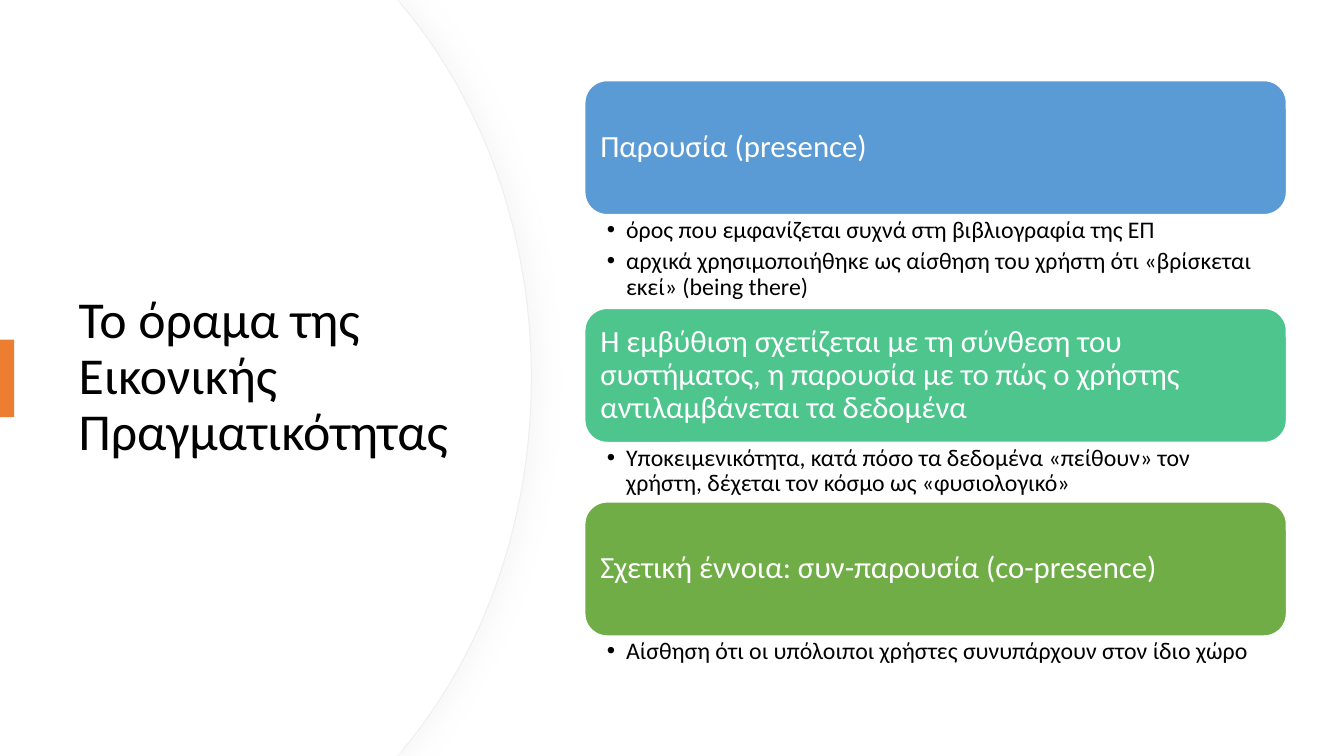
from lxml.etree import SubElement
from pptx import Presentation
from pptx.dml.color import RGBColor
from pptx.enum.shapes import MSO_SHAPE
from pptx.enum.text import MSO_ANCHOR, MSO_AUTO_SIZE, PP_ALIGN
from pptx.oxml.ns import qn
from pptx.util import Inches, Pt

WIDTH, HEIGHT = 13.33, 7.5
FONT = "Calibri"
COLOURS = {
    "white": "FFFFFF", "black": "000000", "edge": "EFEFEF", "shadow": "D9D9D9",
    "accent": "ED7D31", "blue": "5B9BD5", "teal": "4DC58D", "green": "70AD47",
}
CARD_HEIGHT = 1.33
TOPICS = [
    ("blue", "Παρουσία (presence)", 0.93,
     ["όρος που εμφανίζεται συχνά στη βιβλιογραφία της ΕΠ",
      "αρχικά χρησιμοποιήθηκε ως αίσθηση του χρήστη ότι «βρίσκεται εκεί» (being there)"]),
    ("teal", "Η εμβύθιση σχετίζεται με τη σύνθεση του συστήματος, η παρουσία με το πώς "
     "ο χρήστης αντιλαμβάνεται τα δεδομένα", 0.59,
     ["Υποκειμενικότητα, κατά πόσο τα δεδομένα «πείθουν» τον χρήστη, "
      "δέχεται τον κόσμο ως «φυσιολογικό»"]),
    ("green", "Σχετική έννοια: συν-παρουσία (co-presence)", 0.4,
     ["Αίσθηση ότι οι υπόλοιποι χρήστες συνυπάρχουν στον ίδιο χώρο"]),
]


def colour(name):
    """Return the named colour."""
    return RGBColor.from_string(COLOURS[name])


def paint(shape, fill, line=None, width=1):
    """Set a shape's fill and outline and remove its shadow."""
    shape.shadow.inherit = False
    shape.fill.solid()
    shape.fill.fore_color.rgb = colour(fill)
    if line:
        shape.line.color.rgb = colour(line)
        shape.line.width = Pt(width)
    else:
        shape.line.fill.background()


def write(frame, texts, size, ink, anchor=MSO_ANCHOR.TOP, insets=(0.1, 0.05, 0.1, 0.05),
          space_after=0, bullet=None):
    """Fill a text frame with one paragraph per text."""
    frame.word_wrap = True
    frame.auto_size = MSO_AUTO_SIZE.NONE
    frame.vertical_anchor = anchor
    (frame.margin_left, frame.margin_top,
     frame.margin_right, frame.margin_bottom) = map(Inches, insets)
    for index, text in enumerate(texts):
        paragraph = frame.add_paragraph() if index else frame.paragraphs[0]
        paragraph.alignment = PP_ALIGN.LEFT
        paragraph.line_spacing = 0.9
        paragraph.space_before = Pt(0)
        paragraph.space_after = Pt(space_after)
        run = paragraph.add_run()
        run.text = text
        run.font.name = FONT
        run.font.size = Pt(size)
        run.font.color.rgb = colour(ink)
        if bullet:
            properties = paragraph._p.get_or_add_pPr()
            properties.set("marL", str(Inches(0.19)))
            properties.set("indent", str(-Inches(0.19)))
            SubElement(properties, qn("a:buFont"), typeface="Arial")
            SubElement(properties, qn("a:buChar"), char=bullet)


def add_shadow(shape):
    """Give a shape a soft grey shadow to its right."""
    effects = shape._element.spPr.find(qn("a:effectLst"))
    shadow = SubElement(effects, qn("a:outerShdw"), blurRad=str(Pt(20)), dist=str(Pt(3)),
                        dir="0", algn="l", rotWithShape="0")
    shade = SubElement(shadow, qn("a:srgbClr"), val=COLOURS["shadow"])
    SubElement(shade, qn("a:alpha"), val="25000")


def bend(segment, controls):
    """Turn a straight outline segment into a cubic curve with the given controls."""
    segment.tag = qn("a:cubicBezTo")
    for index, (x, y) in enumerate(controls):
        point = segment.makeelement(qn("a:pt"), x=str(Inches(x)), y=str(Inches(y)))
        segment.insert(index, point)


def add_panel(slide, right):
    """Draw a full-height panel whose right side bulges to the given place."""
    shoulder, middle = right - 1.26, HEIGHT / 2
    outline = [(3.94, 0), (shoulder, 0.08), (right, middle), (shoulder, HEIGHT - 0.08),
               (3.94, HEIGHT), (0, HEIGHT)]
    builder = slide.shapes.build_freeform(0, 0)
    builder.add_line_segments([(Inches(x), Inches(y)) for x, y in outline], close=True)
    panel = builder.convert_to_shape()
    segments = list(panel._element.iter(qn("a:lnTo")))
    upper = [(right - 0.48, 1.02), (right, 2.32)]
    bend(segments[2], upper)
    bend(segments[3], [(x, HEIGHT - y) for x, y in reversed(upper)])
    return panel


def add_title_region(slide, left, top, width, height):
    """Draw the curved panels, the title and the accent tab."""
    outer = add_panel(slide, 5.27)
    paint(outer, "white", "edge", 0.75)
    add_shadow(outer)
    paint(add_panel(slide, 5.26), "white")
    title = slide.shapes.title
    title.left, title.top, title.width, title.height = map(Inches, (left, top, width, height))
    write(title.text_frame, ["Το όραμα της Εικονικής Πραγματικότητας"], 37, "black",
          anchor=MSO_ANCHOR.MIDDLE)
    slide.shapes._spTree.append(title._element)
    tab = slide.shapes.add_shape(MSO_SHAPE.RECTANGLE, 0, Inches(3.37),
                                 Inches(0.14), Inches(0.77))
    paint(tab, "accent")


def add_topics(slide, left, top, width):
    """Stack the topic cards, each followed by its bullets."""
    for fill, heading, notes_height, notes in TOPICS:
        card = slide.shapes.add_shape(MSO_SHAPE.ROUNDED_RECTANGLE, Inches(left), Inches(top),
                                      Inches(width), Inches(CARD_HEIGHT))
        paint(card, fill, "white")
        write(card.text_frame, [heading], 22, "white", anchor=MSO_ANCHOR.MIDDLE,
              insets=(0.09,) * 4)
        top += CARD_HEIGHT
        box = slide.shapes.add_textbox(Inches(left), Inches(top), Inches(width),
                                       Inches(notes_height))
        write(box.text_frame, notes, 17, "black", insets=(0.22, 0.03, 0.17, 0.03),
              space_after=4, bullet="•")
        top += notes_height


def main():
    """Build and save the presentation."""
    presentation = Presentation()
    presentation.slide_width, presentation.slide_height = Inches(WIDTH), Inches(HEIGHT)
    slide = presentation.slides.add_slide(presentation.slide_layouts[5])
    add_title_region(slide, 0.68, 1.27, 3.94, 4.95)
    add_topics(slide, 5.8, 0.8, 6.96)
    presentation.save("out.pptx")


if __name__ == "__main__":
    main()
